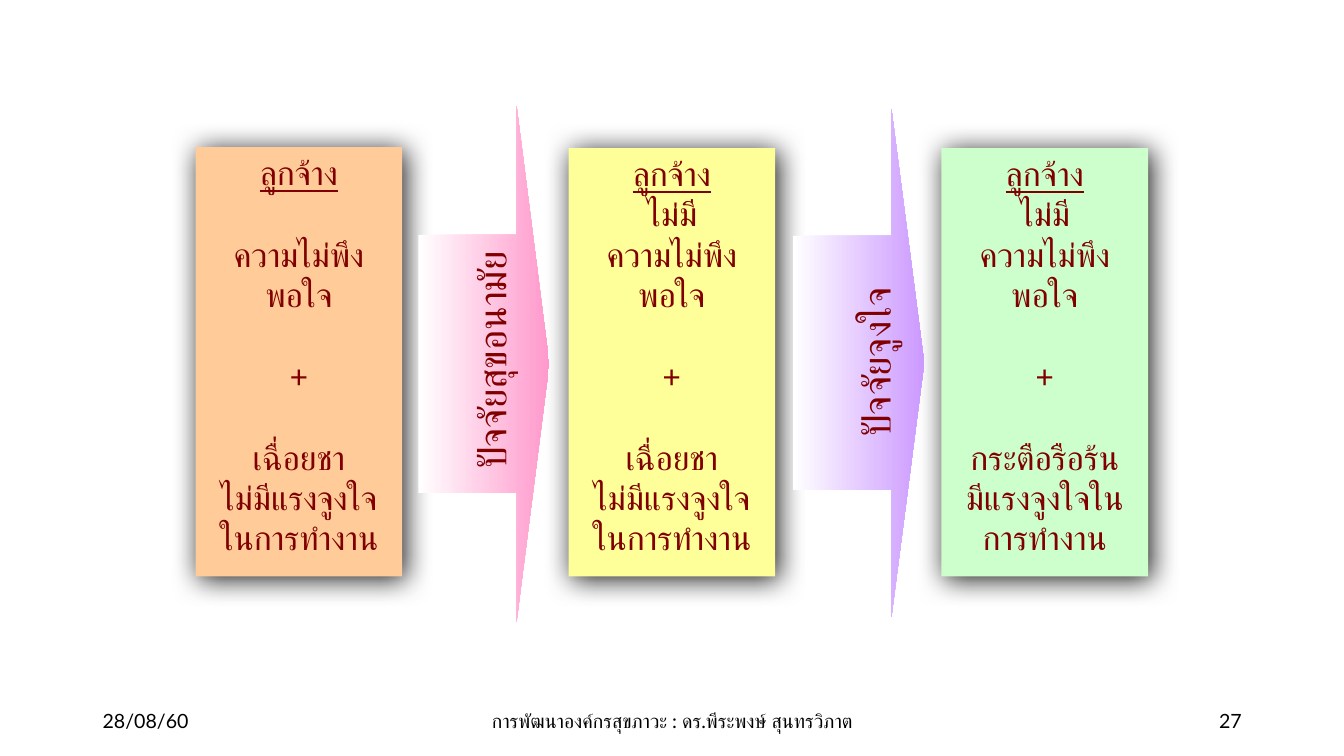
"""Build the slide on hygiene and motivation factors."""
from dataclasses import dataclass

from lxml.etree import SubElement
from pptx import Presentation
from pptx.dml.color import RGBColor
from pptx.enum.shapes import MSO_SHAPE
from pptx.enum.text import MSO_ANCHOR, PP_ALIGN
from pptx.oxml.ns import qn
from pptx.shapes.autoshape import Shape
from pptx.slide import Slide
from pptx.text.text import _Paragraph
from pptx.util import Pt

MAROON = RGBColor(0x80, 0x00, 0x00)
BLACK = RGBColor(0x00, 0x00, 0x00)
WHITE = RGBColor(0xFF, 0xFF, 0xFF)
PEACH = RGBColor(0xFF, 0xCC, 0x99)
YELLOW = RGBColor(0xFF, 0xFF, 0x99)
GREEN = RGBColor(0xCC, 0xFF, 0xCC)
PINK = RGBColor(0xFF, 0x99, 0xCC)
VIOLET = RGBColor(0xCC, 0x99, 0xFF)

STATE_LEFT, STATE_STEP, STATE_WIDTH, STATE_BOTTOM = 139.7, 266.4, 147.6, 411.8
BLOCK_GAP = 29.3
FACTOR_WIDTH = 93.6
FOOTER_TOP, FOOTER_HEIGHT = 500.4, 28.8


@dataclass(frozen=True)
class State:
    """An employee state: blocks of lines, parted by a gap."""

    top: float
    color: RGBColor
    blocks: tuple[tuple[str, ...], ...]


@dataclass(frozen=True)
class Label:
    """A text box with its place and insets."""

    text: str
    left: float
    top: float
    width: float
    height: float
    align: PP_ALIGN = PP_ALIGN.CENTER
    inset_left: float = 7.2
    inset_top: float = 3.6


@dataclass(frozen=True)
class Factor:
    """An arrow between two states and its upright label."""

    left: float
    top: float
    height: float
    color: RGBColor
    label: Label


@dataclass(frozen=True)
class Style:
    """The look of a run."""

    font: str
    size: float
    color: RGBColor


STATE_STYLE = Style("Calibri", 24, MAROON)
FACTOR_STYLE = Style("Calibri", 28, MAROON)
FOOTER_STYLE = Style("Lato", 14, BLACK)

EMPLOYEE = "ลูกจ้าง"
DISSATISFACTION = "ความไม่พึงพอใจ"
INDIFFERENT = ("เฉื่อยชา", "ไม่มีแรงจูงใจ", "ในการทำงาน")
EAGER = ("กระตือรือร้น", "มีแรงจูงใจในการทำงาน")
NO_DISSATISFACTION = (EMPLOYEE, "ไม่มี", DISSATISFACTION)

STATES = (
    State(105.1, PEACH, ((EMPLOYEE,), (DISSATISFACTION,), ("+",), INDIFFERENT)),
    State(105.8, YELLOW, (NO_DISSATISFACTION, ("+",), INDIFFERENT)),
    State(105.8, GREEN, (NO_DISSATISFACTION, ("+",), EAGER)),
)
FACTORS = (
    Factor(298.8, 75.6, 368.6, PINK,
           Label("ปัจจัยสุขอนามัย", 246.2, 243.4, 215.3, 47.5, inset_left=27)),
    Factor(566.6, 77.8, 362.9, VIOLET,
           Label("ปัจจัยจูงใจ", 528.5, 221.8, 157, 73.4, inset_top=37.8)),
)
FOOTERS = (
    Label("28/08/60", 66.2, FOOTER_TOP, 216, FOOTER_HEIGHT, PP_ALIGN.LEFT),
    Label("การพัฒนาองค์กรสุขภาวะ : ดร.พีระพงษ์ สุนทรวิภาต",
          318.2, FOOTER_TOP, 324, FOOTER_HEIGHT),
    Label("27", 678.2, FOOTER_TOP, 216, FOOTER_HEIGHT, PP_ALIGN.RIGHT),
)


def style_line(line: _Paragraph, style: Style, align: PP_ALIGN) -> None:
    """Align a paragraph and format its runs."""
    line.alignment = align
    for run in line.runs:
        run.font.name = style.font
        run.font.size = Pt(style.size)
        run.font.color.rgb = style.color


def add_glow_shadow(panel: Shape) -> None:
    """Give a panel a soft dark shadow."""
    effects = panel._element.spPr.find(qn("a:effectLst"))
    shadow = SubElement(effects, qn("a:outerShdw"), blurRad=str(Pt(20)),
                        dist=str(Pt(3)), dir=str(40 * 60000),
                        algn="ctr", rotWithShape="0")
    tone = SubElement(shadow, qn("a:srgbClr"), val=str(BLACK))
    SubElement(tone, qn("a:alpha"), val="87000")


def add_state(slide: Slide, index: int, state: State) -> None:
    """Draw one employee state."""
    panel = slide.shapes.add_shape(
        MSO_SHAPE.RECTANGLE, Pt(STATE_LEFT + index * STATE_STEP), Pt(state.top),
        Pt(STATE_WIDTH), Pt(STATE_BOTTOM - state.top))
    panel.fill.solid()
    panel.fill.fore_color.rgb = state.color
    panel.line.fill.background()
    panel.shadow.inherit = False
    add_glow_shadow(panel)
    frame = panel.text_frame
    frame.word_wrap = True
    frame.vertical_anchor = MSO_ANCHOR.TOP
    frame.text = "\n".join(text for block in state.blocks for text in block)
    lines = iter(frame.paragraphs)
    for block_index, block in enumerate(state.blocks):
        for line_index in range(len(block)):
            line = next(lines)
            style_line(line, STATE_STYLE, PP_ALIGN.CENTER)
            if block_index and not line_index:
                line.space_before = Pt(BLOCK_GAP)
    frame.paragraphs[0].runs[0].font.underline = True


def add_label(slide: Slide, label: Label, style: Style,
              anchor: MSO_ANCHOR, rotation: float = 0) -> None:
    """Draw one line of text."""
    caption = slide.shapes.add_textbox(
        Pt(label.left), Pt(label.top), Pt(label.width), Pt(label.height))
    caption.rotation = rotation
    frame = caption.text_frame
    frame.word_wrap = True
    frame.vertical_anchor = anchor
    frame.margin_left = Pt(label.inset_left)
    frame.margin_top = Pt(label.inset_top)
    frame.text = label.text
    style_line(frame.paragraphs[0], style, label.align)


def add_factor(slide: Slide, factor: Factor) -> None:
    """Draw one factor arrow with its label."""
    arrow = slide.shapes.add_shape(
        MSO_SHAPE.RIGHT_ARROW, Pt(factor.left), Pt(factor.top),
        Pt(FACTOR_WIDTH), Pt(factor.height))
    arrow.adjustments[0] = 0.5
    arrow.adjustments[1] = 0.25
    arrow.fill.gradient()
    arrow.fill.gradient_angle = 0
    for stop, color in zip(arrow.fill.gradient_stops, (WHITE, factor.color)):
        stop.color.rgb = color
    arrow.line.fill.background()
    arrow.shadow.inherit = False
    add_label(slide, factor.label, FACTOR_STYLE, MSO_ANCHOR.TOP, 270)


def main() -> None:
    """Build and save the slide."""
    deck = Presentation()
    deck.slide_width, deck.slide_height = Pt(960), Pt(540)
    slide = deck.slides.add_slide(deck.slide_layouts[6])
    for footer in FOOTERS:
        add_label(slide, footer, FOOTER_STYLE, MSO_ANCHOR.MIDDLE)
    for index, state in enumerate(STATES):
        add_state(slide, index, state)
    for factor in FACTORS:
        add_factor(slide, factor)
    deck.save("out.pptx")


if __name__ == "__main__":
    main()
